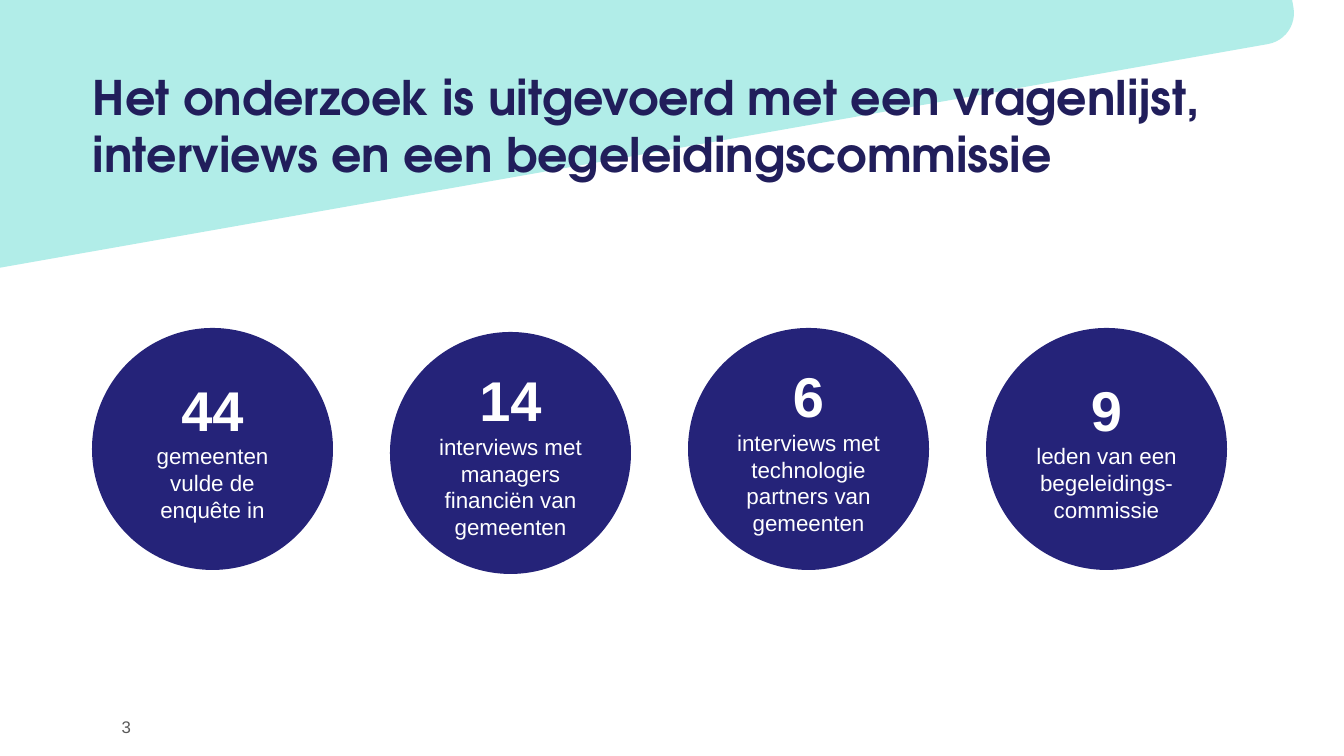
from pptx import Presentation
from pptx.dml.color import RGBColor
from pptx.enum.shapes import MSO_SHAPE
from pptx.enum.text import MSO_ANCHOR, PP_ALIGN
from pptx.util import Emu, Pt

ROUNDED, CIRCLE = MSO_SHAPE.ROUNDED_RECTANGLE, MSO_SHAPE.OVAL
TOP, MIDDLE = MSO_ANCHOR.TOP, MSO_ANCHOR.MIDDLE
LEFT, CENTER, RIGHT = PP_ALIGN.LEFT, PP_ALIGN.CENTER, PP_ALIGN.RIGHT

MINT = RGBColor(0xB1, 0xED, 0xE8)
NAVY = RGBColor(0x25, 0x23, 0x79)
TITLE_INK = RGBColor(0x21, 0x1E, 0x5B)
GRAY = RGBColor(0x59, 0x59, 0x59)
WHITE = RGBColor(0xFF, 0xFF, 0xFF)

EMU_PER_PX = 914400 / 100.8
CIRCLE_LEFT, CIRCLE_STEP = 92, 298
CIRCLE_WIDTH, CIRCLE_HEIGHT = 241, 242

SOURCES = [
    (328, "44", "gemeenten vulde de enquête in"),
    (332, "14", "interviews met managers financiën van gemeenten"),
    (328, "6", "interviews met technologie partners van gemeenten"),
    (328, "9", "leden van een begeleidings-commissie"),
]


def px(*lengths):
    return [Emu(round(length * EMU_PER_PX)) for length in lengths]


def add_run(paragraph, text, *, size, color, font="Arial", bold=False):
    run = paragraph.add_run()
    run.text = text
    run.font.name = font
    run.font.size = Pt(size)
    run.font.bold = bold
    run.font.color.rgb = color


def add_text(slide, box, text, *, align=LEFT, anchor=TOP, inset=10, **style):
    frame = slide.shapes.add_textbox(*px(*box)).text_frame
    frame.word_wrap = True
    frame.vertical_anchor = anchor
    frame.margin_left, frame.margin_right = px(inset, inset)
    frame.margin_top, frame.margin_bottom = px(inset // 2, inset // 2)
    paragraph = frame.paragraphs[0]
    paragraph.alignment = align
    add_run(paragraph, text, **style)


def add_filled(slide, preset, box, color):
    shape = slide.shapes.add_shape(preset, *px(*box))
    shape.shadow.inherit = False
    shape.fill.solid()
    shape.fill.fore_color.rgb = color
    shape.line.fill.background()
    return shape


def add_figure_circle(slide, left, top, figure, label):
    """Circle with a large figure above its explanation."""
    circle = add_filled(slide, CIRCLE, (left, top, CIRCLE_WIDTH, CIRCLE_HEIGHT), NAVY)
    frame = circle.text_frame
    frame.word_wrap = True
    frame.vertical_anchor = MIDDLE
    paragraph = frame.paragraphs[0]
    paragraph.alignment = CENTER
    add_run(paragraph, figure, size=40, color=WHITE, bold=True)
    paragraph.add_line_break()
    add_run(paragraph, label, size=16, color=WHITE)


def main():
    prs = Presentation()
    prs.slide_width, prs.slide_height = px(1344, 756)
    slide = prs.slides.add_slide(prs.slide_layouts[6])

    band = add_filled(slide, ROUNDED, (-76, -110, 1362, 269), MINT)
    band.adjustments[0] = 0.117
    band.rotation = 350

    add_text(slide, (93, 68, 1134, 133),
             "Het onderzoek is uitgevoerd met een vragenlijst, "
             "interviews en een begeleidingscommissie",
             inset=0, size=34, color=TITLE_INK, font="TeX Gyre Adventor", bold=True)
    add_text(slide, (93, 707, 48, 40), "3",
             align=RIGHT, anchor=MIDDLE, size=12, color=GRAY)

    for index, (top, figure, label) in enumerate(SOURCES):
        add_figure_circle(slide, CIRCLE_LEFT + index * CIRCLE_STEP, top, figure, label)

    prs.save("out.pptx")


if __name__ == "__main__":
    main()
